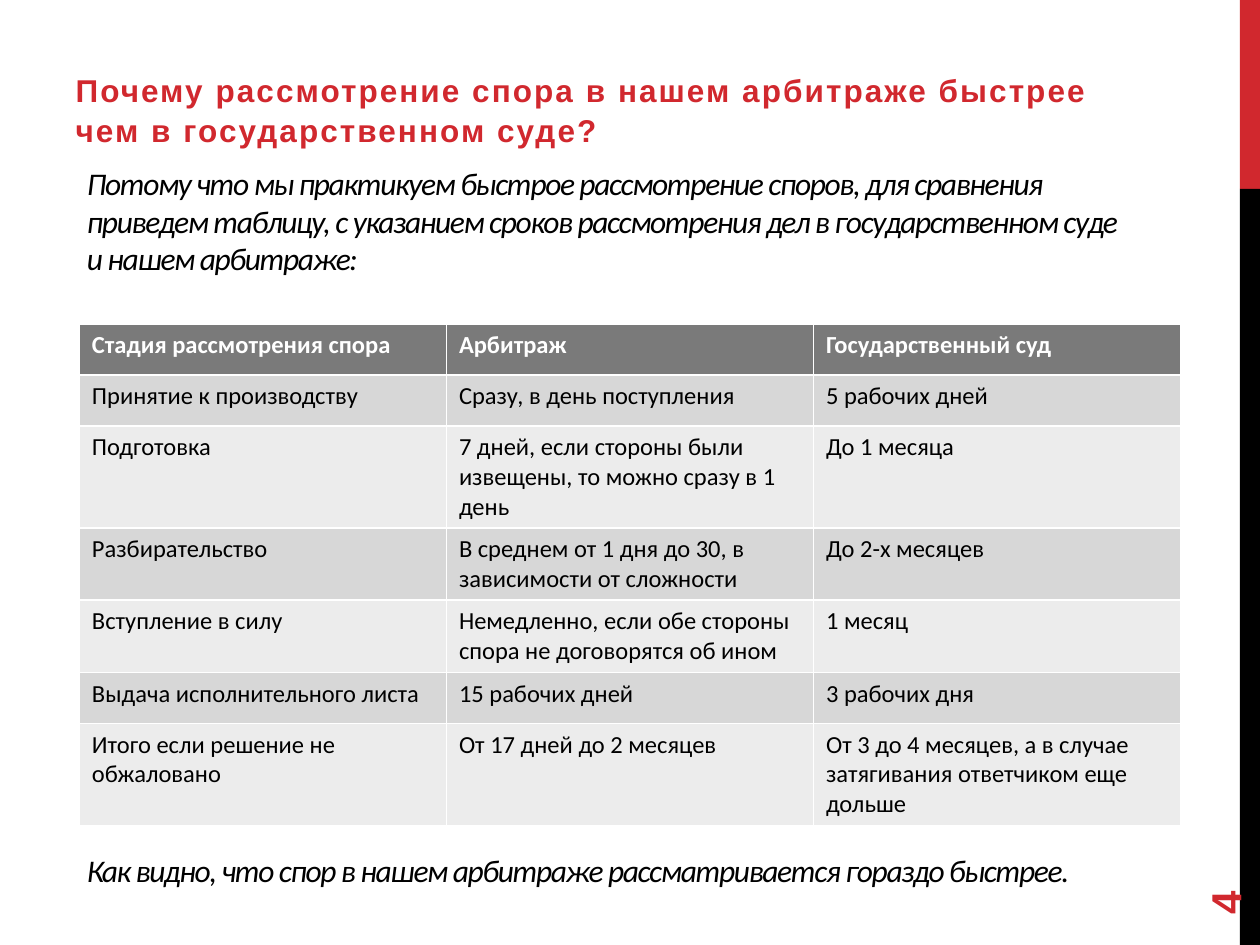
from lxml.etree import SubElement
from pptx import Presentation
from pptx.dml.color import RGBColor
from pptx.enum.shapes import MSO_SHAPE
from pptx.enum.text import MSO_ANCHOR, MSO_AUTO_SIZE, PP_ALIGN
from pptx.oxml.ns import qn
from pptx.util import Inches, Pt

COLORS = {
    "accent": "D1282E",
    "ink": "000000",
    "paper": "FFFFFF",
    "header": "7A7A7A",
    "odd": "D7D7D7",
    "even": "ECECEC",
}


def add_run(paragraph, text, size, font, color, bold=False, italic=False, tracking=0):
    run = paragraph.add_run()
    run.text = text
    run.font.size = Pt(size)
    run.font.name = font
    run.font.bold = bold
    run.font.italic = italic
    run.font.color.rgb = RGBColor.from_string(COLORS[color])
    if tracking:
        run.font._element.set("spc", str(int(tracking * 100)))


def prepare(shape, left, top, width, height, anchor, bottom=0.05):
    shape.left, shape.top = Inches(left), Inches(top)
    shape.width, shape.height = Inches(width), Inches(height)
    frame = shape.text_frame
    frame.word_wrap = True
    frame.auto_size = MSO_AUTO_SIZE.NONE
    frame.vertical_anchor = anchor
    frame.margin_bottom = Inches(bottom)
    paragraph = frame.paragraphs[0]
    paragraph.alignment = PP_ALIGN.LEFT
    return paragraph


prs = Presentation()
prs.slide_width, prs.slide_height = Inches(10), Inches(7.5)
slide = prs.slides.add_slide(prs.slide_layouts[1])
shapes = slide.shapes

band_left = Inches(9.84)
band_split = int(prs.slide_height * 0.2)
for color, top, bottom in (("accent", 0, band_split), ("ink", band_split, prs.slide_height)):
    band = shapes.add_shape(MSO_SHAPE.RECTANGLE, band_left, top, prs.slide_width - band_left, bottom - top)
    band.shadow.inherit = False
    band.fill.solid()
    band.fill.fore_color.rgb = RGBColor.from_string(COLORS[color])
    band.line.fill.background()

answer = prepare(shapes.title, 0.59, 1.39, 8.41, 1.02, MSO_ANCHOR.MIDDLE, 0.35)
add_run(
    answer,
    "Потому что мы практикуем быстрое рассмотрение споров, для сравнения приведем таблицу, "
    "с указанием сроков рассмотрения дел в государственном суде и нашем арбитраже:",
    18, "Calibri", "ink", italic=True, tracking=-0.8,
)

question = prepare(slide.placeholders[1], 0.5, 0.25, 8.5, 0.98, MSO_ANCHOR.BOTTOM)
question.line_spacing = 1.05
question.space_after = Pt(6)
question_format = question._p.get_or_add_pPr()
question_format.set("marL", "0")
question_format.set("indent", "0")
SubElement(question_format, qn("a:buNone"))
add_run(
    question,
    "Почему рассмотрение спора в нашем арбитраже быстрее чем в государственном суде?",
    18, "Arial", "accent", bold=True, tracking=1.2,
)

page_number = shapes.add_textbox(0, 0, 0, 0)
page_number.rotation = 270
add_run(
    prepare(page_number, 9, 6.44, 1.44, 0.4, MSO_ANCHOR.MIDDLE),
    "4", 24, "Arial", "accent", bold=True,
)

stages = [
    ("Стадия рассмотрения спора", "Арбитраж", "Государственный суд"),
    ("Принятие к производству", "Сразу, в день поступления", "5 рабочих дней"),
    ("Подготовка", "7 дней, если стороны были извещены, то можно сразу в 1 день", "До 1 месяца"),
    ("Разбирательство", "В среднем от 1 дня до 30, в зависимости от сложности", "До 2-х месяцев"),
    ("Вступление в силу", "Немедленно, если обе стороны спора не договорятся об ином", "1 месяц"),
    ("Выдача исполнительного листа", "15 рабочих дней", "3 рабочих дня"),
    (
        "Итого если решение не обжаловано",
        "От 17 дней до 2 месяцев",
        "От 3 до 4 месяцев, а в случае затягивания ответчиком еще дольше",
    ),
]
row_height = 0.405
terms = shapes.add_table(
    len(stages), len(stages[0]),
    Inches(0.63), Inches(2.57), Inches(8.74), Inches(row_height * len(stages)),
).table
for row, stage in enumerate(stages):
    heading = row == 0
    fill = "header" if heading else "odd" if row % 2 else "even"
    for column, text in enumerate(stage):
        cell = terms.cell(row, column)
        cell.fill.solid()
        cell.fill.fore_color.rgb = RGBColor.from_string(COLORS[fill])
        add_run(
            cell.text_frame.paragraphs[0], text, 14, "Calibri",
            "paper" if heading else "ink", bold=heading,
        )

conclusion = prepare(shapes.add_textbox(0, 0, 0, 0), 0.59, 6.74, 8.41, 0.63, MSO_ANCHOR.MIDDLE, 0.35)
add_run(
    conclusion,
    "Как видно, что спор в нашем арбитраже рассматривается гораздо быстрее.",
    18, "Calibri", "ink", italic=True, tracking=-0.8,
)

prs.save("out.pptx")
